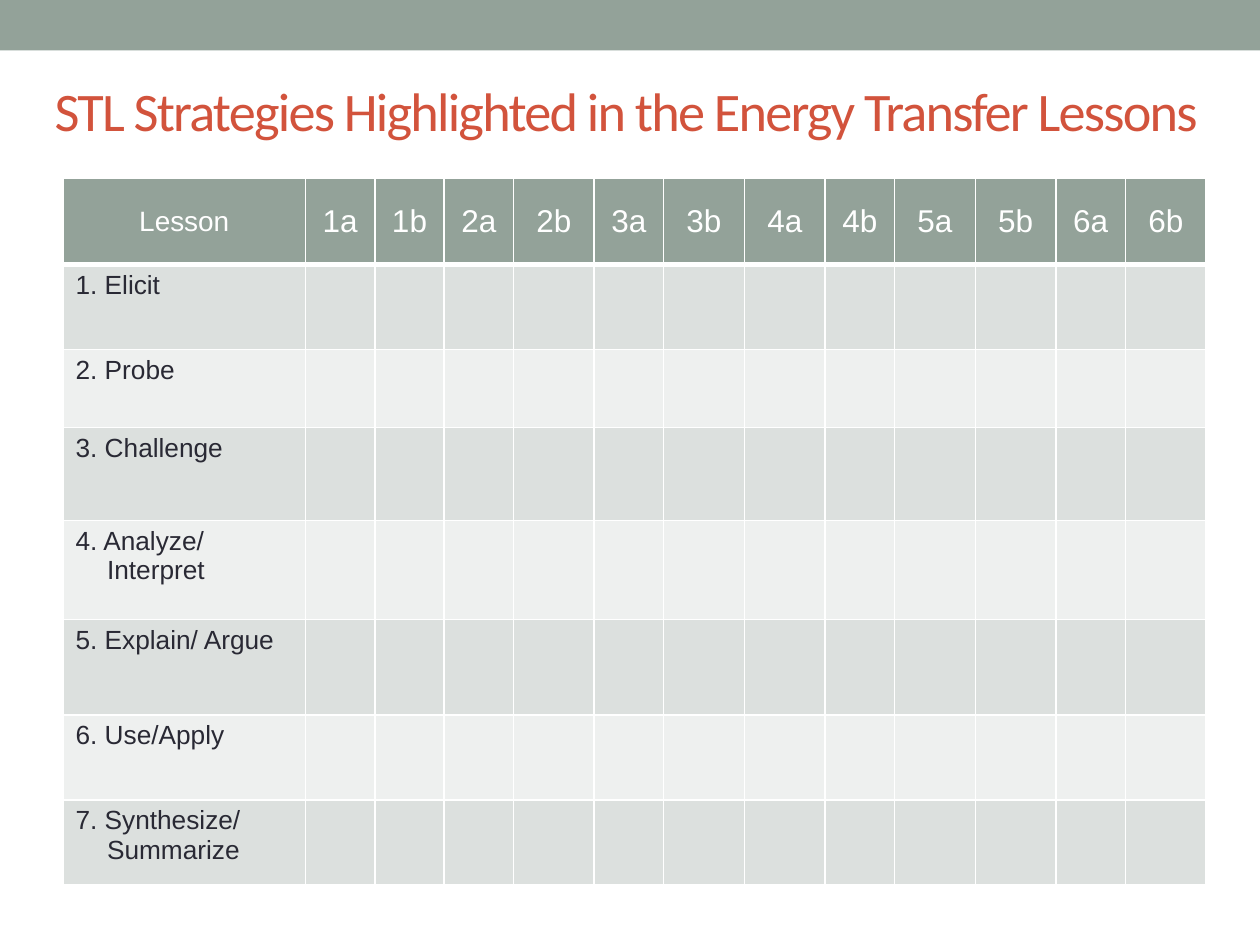
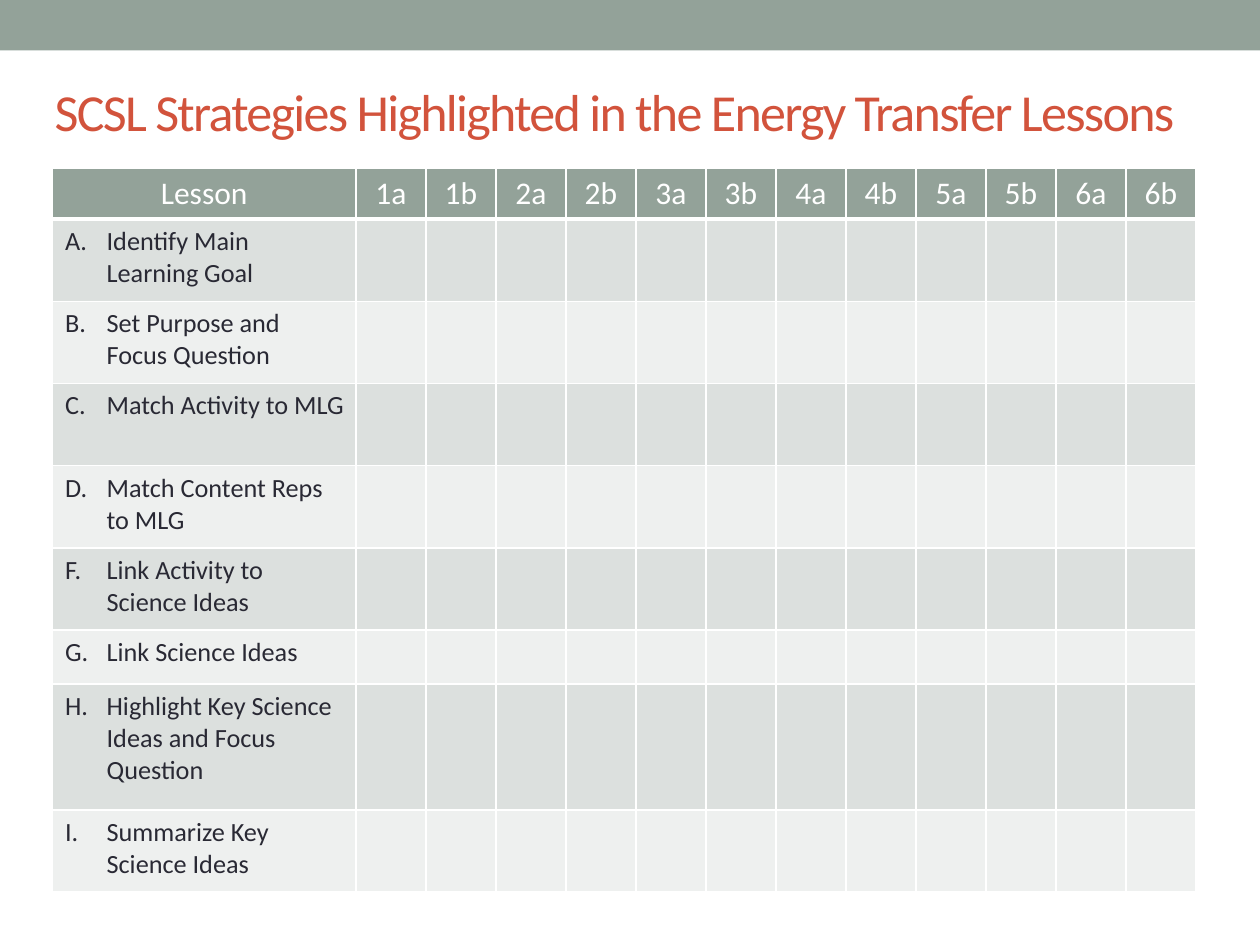
from dataclasses import dataclass

import lxml.etree
import pptx
import pptx.dml.color
import pptx.enum.shapes
import pptx.enum.text
import pptx.oxml.ns
import pptx.util

# Slide grid: 120 columns by 90 rows
SLIDE_WIDTH = pptx.util.Inches(10)
SLIDE_HEIGHT = pptx.util.Inches(7.5)
COLUMN = SLIDE_WIDTH / 120
ROW = SLIDE_HEIGHT / 90

# Shared look
SAGE, BRICK, INK, WHITE = "93A299", "D2533C", "292934", "FFFFFF"
STRIPES = ("DCE0DE", "EEF0EF")
TITLE_FONT = "Calibri"
LESSONS = [f"{number}{part}" for number in range(1, 7) for part in "ab"]
WIDE_LESSONS = {"2b", "3b", "4a", "5a", "5b", "6b"}
ALIGN = pptx.enum.text.PP_ALIGN
MIDDLE = pptx.enum.text.MSO_ANCHOR.MIDDLE


@dataclass(frozen=True)
class StrategyMatrix:
    """A title and a grid of strategies against lessons, in grid units."""
    title: str
    title_size: float
    left: float
    top: float
    strategy_width: float
    lesson_widths: list[float]
    header_height: float
    strategies: list[tuple[str, float]]  # label and row height
    font: str
    corner_size: float
    header_space: float
    label_space: float
    hanging: float


STL = StrategyMatrix(
    title="STL Strategies Highlighted in the Energy Transfer Lessons",
    title_size=31, left=6, top=17, strategy_width=23.1,
    lesson_widths=[7.7 if lesson in WIDE_LESSONS else 6.6 for lesson in LESSONS],
    header_height=8.2,
    strategies=[
        ("1. Elicit", 8.1),
        ("2. Probe", 7.4),
        ("3. Challenge", 8.9),
        ("4. Analyze/ Interpret", 9.4),
        ("5. Explain/ Argue", 9.1),
        ("6. Use/Apply", 8.1),
        ("7. Synthesize/\vSummarize", 8.1),
    ],
    font="Arial", corner_size=16, header_space=12, label_space=12, hanging=0.25,
)

SCSL = StrategyMatrix(
    title="SCSL Strategies Highlighted in the Energy Transfer Lessons",
    title_size=29.7, left=5, top=16, strategy_width=28.9,
    lesson_widths=[6.67] * len(LESSONS),
    header_height=4.8,
    strategies=[
        ("A.\tIdentify Main Learning Goal", 7.83),
        ("B.\tSet Purpose and Focus Question", 7.83),
        ("C.\tMatch Activity to MLG", 7.83),
        ("D.\tMatch Content Reps to MLG", 7.83),
        ("F.\tLink Activity to Science Ideas", 7.83),
        ("G.\tLink Science Ideas", 5.13),
        ("H.\tHighlight Key Science Ideas and Focus Question", 12),
        ("I.\tSummarize Key Science Ideas", 7.83),
    ],
    font="Calibri", corner_size=18, header_space=0, label_space=0, hanging=0.33,
)


def rgb(code: str) -> pptx.dml.color.RGBColor:
    return pptx.dml.color.RGBColor.from_string(code)


def apply(target, values: dict) -> None:
    for name, value in values.items():
        setattr(target, name, value)


def across(columns: float) -> int:
    return round(columns * COLUMN)


def down(rows: float) -> int:
    return round(rows * ROW)


def style_font(font, name: str, size: float, color: str) -> None:
    apply(font, {"name": name, "size": pptx.util.Pt(size), "bold": False})
    font.color.rgb = rgb(color)


def paint_cell(cell, fill: str, bottom: float = 1) -> None:
    """Draw white borders, then fill the cell."""
    properties = cell._tc.get_or_add_tcPr()
    for side, points in (("lnL", 1), ("lnR", 1), ("lnT", 1), ("lnB", bottom)):
        line = lxml.etree.SubElement(properties, pptx.oxml.ns.qn(f"a:{side}"),
                                     w=str(pptx.util.Pt(points)))
        paint = lxml.etree.SubElement(line, pptx.oxml.ns.qn("a:solidFill"))
        lxml.etree.SubElement(paint, pptx.oxml.ns.qn("a:srgbClr"), val=WHITE)
    cell.fill.solid()
    cell.fill.fore_color.rgb = rgb(fill)


def write_cell(cell, text: str, font: str, size: float, color: str,
               paragraph_format: dict) -> None:
    paragraph = cell.text_frame.paragraphs[0]
    paragraph.text = text
    apply(paragraph, paragraph_format)
    for run in paragraph.runs:
        style_font(run.font, font, size, color)


def add_band(slide) -> None:
    """Put the top band on the slide's layout, behind everything."""
    band = slide.shapes.add_shape(pptx.enum.shapes.MSO_SHAPE.RECTANGLE,
                                  0, 0, SLIDE_WIDTH, down(4.8))
    band.shadow.inherit = False
    band.fill.solid()
    band.fill.fore_color.rgb = rgb(SAGE)
    band.line.fill.background()
    slide.slide_layout.shapes._spTree.insert(2, band._element)


def set_title(slide, matrix: StrategyMatrix) -> None:
    title = slide.shapes.title
    apply(title, {"left": across(4), "top": down(4),
                  "width": across(113), "height": down(13)})
    apply(title.text_frame, {"text": matrix.title, "word_wrap": True,
                             "vertical_anchor": MIDDLE,
                             "auto_size": pptx.enum.text.MSO_AUTO_SIZE.NONE})
    paragraph = title.text_frame.paragraphs[0]
    paragraph.alignment = ALIGN.LEFT
    font = paragraph.runs[0].font
    style_font(font, TITLE_FONT, matrix.title_size, BRICK)
    font._element.set("spc", "-100")


def add_matrix(slide, matrix: StrategyMatrix) -> None:
    widths = [matrix.strategy_width, *matrix.lesson_widths]
    heights = [matrix.header_height, *(height for _, height in matrix.strategies)]
    table = slide.shapes.add_table(
        len(heights), len(widths), across(matrix.left), down(matrix.top),
        across(sum(widths)), down(sum(heights))).table
    apply(table, {"first_row": False, "horz_banding": False})
    for column, width in zip(table.columns, widths):
        column.width = across(width)
    for row, height in zip(table.rows, heights):
        row.height = down(height)

    # Lesson header
    for index, lesson in enumerate(["Lesson", *LESSONS]):
        cell = table.cell(0, index)
        cell.vertical_anchor = MIDDLE
        paint_cell(cell, SAGE, bottom=3)
        write_cell(cell, lesson, matrix.font, 18 if index else matrix.corner_size, WHITE,
                   {"alignment": ALIGN.CENTER,
                    "space_before": pptx.util.Pt(matrix.header_space)})

    # Strategy rows
    for index, (strategy, _) in enumerate(matrix.strategies):
        for column in range(len(widths)):
            paint_cell(table.cell(index + 1, column), STRIPES[index % 2])
        label = table.cell(index + 1, 0)
        label.margin_right = pptx.util.Inches(0.08)
        write_cell(label, strategy, matrix.font, 15, INK,
                   {"space_after": pptx.util.Pt(matrix.label_space)})
        indent = pptx.util.Inches(matrix.hanging)
        paragraph_properties = label.text_frame.paragraphs[0]._p.get_or_add_pPr()
        paragraph_properties.set("marL", str(indent))
        paragraph_properties.set("indent", str(-indent))


def main() -> None:
    deck = pptx.Presentation()
    apply(deck, {"slide_width": SLIDE_WIDTH, "slide_height": SLIDE_HEIGHT})
    title_only = deck.slide_layouts[5]
    for matrix in (STL, SCSL):
        slide = deck.slides.add_slide(title_only)
        set_title(slide, matrix)
        add_matrix(slide, matrix)
    add_band(deck.slides[0])
    deck.save("out.pptx")


if __name__ == "__main__":
    main()
